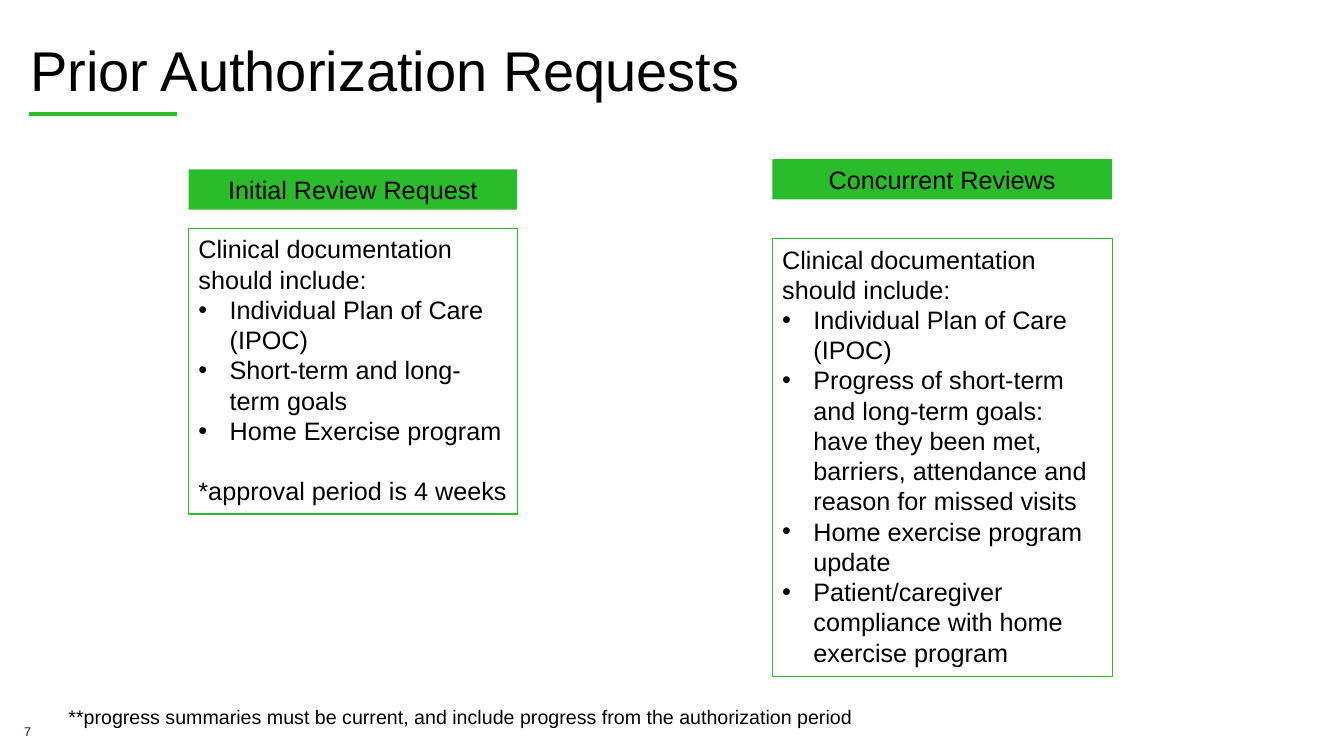
from pptx import Presentation
from pptx.dml.color import RGBColor
from pptx.enum.shapes import MSO_CONNECTOR as Line, MSO_SHAPE as Shape
from pptx.enum.text import MSO_ANCHOR as Anchor, PP_ALIGN as Align
from pptx.oxml.ns import qn
from pptx.util import Pt
from lxml.etree import SubElement

PX = 9144
GREEN = RGBColor(0x2B, 0xBC, 0x2B)
BLACK = RGBColor(0, 0, 0)
INK = RGBColor(0x04, 0x21, 0x26)

deck = Presentation()
deck.slide_width, deck.slide_height = 1333 * PX, 750 * PX
slide = deck.slides.add_slide(deck.slide_layouts[6])
shapes = slide.shapes


def write(para, text, size, color=BLACK, align=Align.LEFT):
    para.text = text
    para.alignment = align
    para.font.name = "Arial"
    para.font.size = Pt(size)
    para.font.color.rgb = color


def add_text(x, y, w, h, text, size, color=BLACK, align=Align.LEFT):
    box = shapes.add_textbox(x * PX, y * PX, w * PX, h * PX)
    frame = box.text_frame
    frame.word_wrap = True
    write(frame.paragraphs[0], text, size, color, align)
    return frame


rule = shapes.add_connector(Line.STRAIGHT, 29 * PX, 113 * PX, 176 * PX, 113 * PX)
rule.line.color.rgb = GREEN
rule.line.width = Pt(3)
SubElement(rule._element.spPr, qn("a:effectLst"))

number = add_text(1, 706, 53, 40, "7", 9, INK, Align.CENTER)
number.vertical_anchor = Anchor.MIDDLE

title = add_text(30, 44, 1248, 57, "Prior Authorization Requests", 40)
title.vertical_anchor = Anchor.MIDDLE
title.margin_left = title.margin_right = title.margin_top = title.margin_bottom = 0
title.paragraphs[0].line_spacing = 0.9

INTRO = "Clinical documentation should include:"
PLAN = "Individual Plan of Care (IPOC)"
cards = [
    (187, 326, 168, 227, 283, "Initial Review Request",
     [PLAN, "Short-term and long-term goals", "Home Exercise program"],
     "*approval period is 4 weeks"),
    (766, 337, 158, 237, 434, "Concurrent Reviews",
     [PLAN,
      "Progress of short-term and long-term goals: have they been met, "
      "barriers, attendance and reason for missed visits",
      "Home exercise program update",
      "Patient/caregiver compliance with home exercise program"],
     None),
]
for x, w, head_y, body_y, body_h, name, items, note in cards:
    head = shapes.add_shape(Shape.RECTANGLE, x * PX, head_y * PX, w * PX, 40 * PX)
    head.fill.solid()
    head.fill.fore_color.rgb = GREEN
    head.line.fill.background()
    write(head.text_frame.paragraphs[0], name, 18, align=Align.CENTER)

    body = shapes.add_shape(Shape.RECTANGLE, x * PX, body_y * PX, w * PX, body_h * PX)
    body.fill.background()
    body.line.color.rgb = GREEN
    body.line.width = Pt(0.75)
    frame = body.text_frame
    write(frame.paragraphs[0], INTRO, 18)
    for item in items:
        para = frame.add_paragraph()
        props = para._p.get_or_add_pPr()
        props.set("marL", str(31 * PX))
        props.set("indent", str(-31 * PX))
        SubElement(props, qn("a:buFont")).set("typeface", "Arial")
        SubElement(props, qn("a:buChar")).set("char", "•")
        write(para, item, 18)
    if note:
        para = frame.add_paragraph()
        write(para, note, 18)
        para.space_before = Pt(21.6)

    for shape in (head, body):
        shape.shadow.inherit = False
        shape.text_frame.word_wrap = True
        shape.text_frame.vertical_anchor = Anchor.TOP

add_text(58, 694, 801, 34,
         "**progress summaries must be current, and include progress "
         "from the authorization period", 14)

deck.save("out.pptx")
